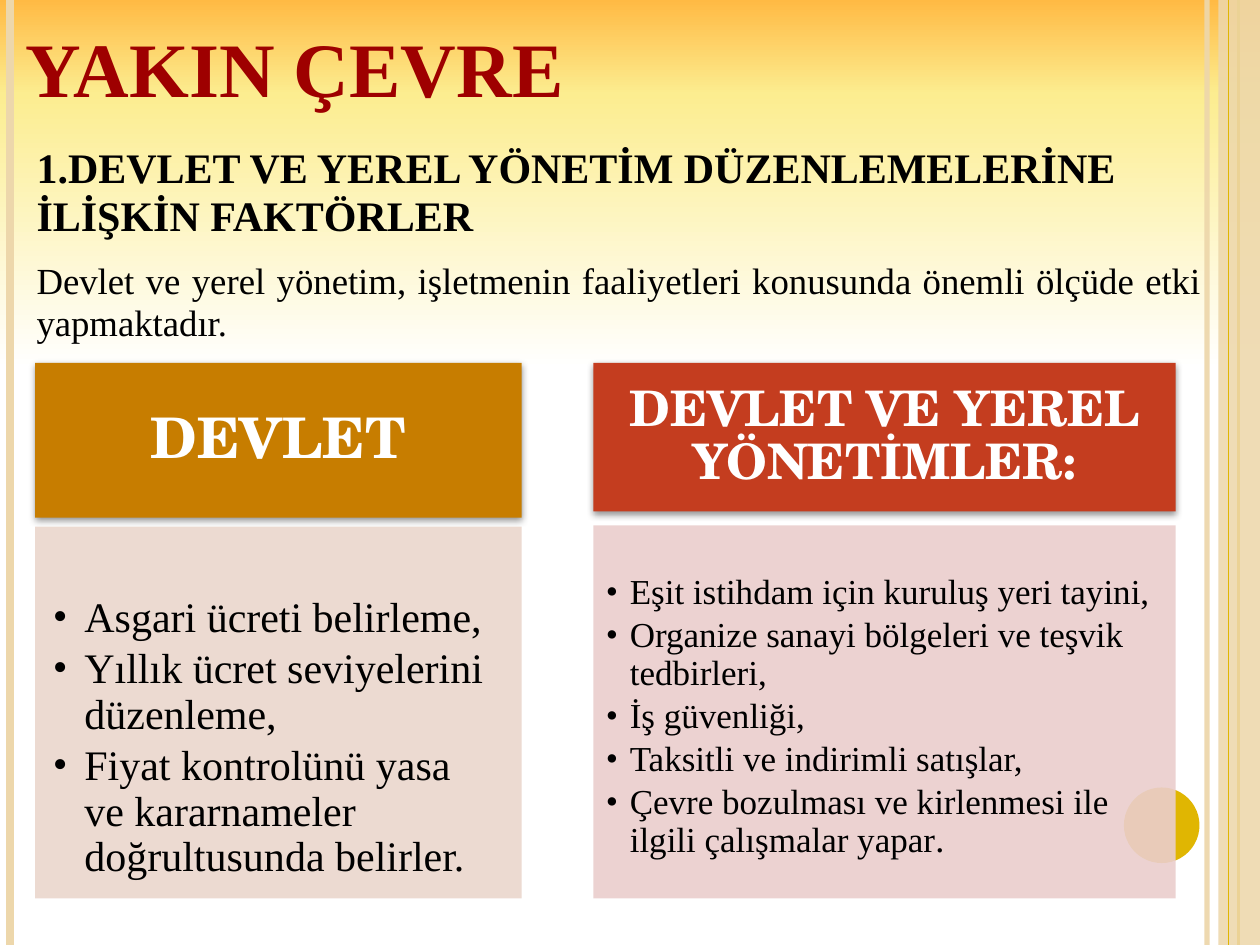
from copy import deepcopy
from dataclasses import dataclass

from lxml import etree
from pptx import Presentation
from pptx.dml import color
from pptx.enum import shapes, text
from pptx.oxml import ns
from pptx.util import Inches, Pt


@dataclass(frozen=True)
class Theme:
    serif: str = "Times New Roman"
    display: str = "TeX Gyre Schola"
    title: str = "9E0000"
    ink: str = "000000"
    white: str = "FFFFFF"
    sand: str = "EDD7AB"
    gold: str = "E0B602"
    background: tuple = ((0, "FFBA44"), (10, "FCED90"), (39, "FFFFFF"))
    title_size: float = 44
    heading_size: float = 24
    body_size: float = 21


@dataclass(frozen=True)
class Box:
    left: float
    top: float
    width: float
    height: float

    def emu(self) -> tuple:
        return tuple(Inches(v) for v in (self.left, self.top, self.width, self.height))


@dataclass(frozen=True)
class Rule:
    x: float
    color: str
    weight: float
    opacity: int = 100


@dataclass(frozen=True)
class Card:
    header: Box
    header_fill: str
    title: str
    title_size: float
    header_insets: tuple
    panel: Box
    panel_fill: str
    items: tuple
    item_size: float
    item_insets: tuple
    indent: float
    end_mark: str = ""


THEME = Theme()
RULES = (
    Rule(9.58, THEME.sand, 3, 93),
    Rule(0.08, THEME.sand, 4.5),
    Rule(9.83, THEME.gold, 1.5),
)
INNER_RULE = Rule(9.75, THEME.gold, 0.75)
CARDS = (
    Card(
        Box(0.28, 2.88, 3.86, 1.23), "C77D00", "DEVLET", 32, (0.25, 0.14, 0.25, 0.14),
        Box(0.28, 4.18, 3.86, 2.95), "EBD7CC",
        (
            "Asgari ücreti belirleme,",
            "Yıllık ücret seviyelerini düzenleme,",
            "Fiyat kontrolünü yasa ve kararnameler doğrultusunda belirler.",
        ),
        24, (0.14, 0.55, 0.19, 0.21), 0.25,
    ),
    Card(
        Box(4.71, 2.88, 4.62, 1.18), "C43D1F", "DEVLET VE YEREL YÖNETİMLER:", 28,
        (0.22, 0.12, 0.22, 0.12),
        Box(4.71, 4.17, 4.62, 2.96), "EACECD",
        (
            "Eşit istihdam için kuruluş yeri tayini,",
            "Organize sanayi bölgeleri ve teşvik tedbirleri,",
            "İş güvenliği,",
            "Taksitli ve indirimli satışlar,",
            "Çevre bozulması ve kirlenmesi ile ilgili çalışmalar yapar",
        ),
        20, (0.1, 0.39, 0.13, 0.15), 0.19, ".",
    ),
)


def add_xml(parent, tag: str, **attributes):
    return etree.SubElement(parent, ns.qn(tag), {k: str(v) for k, v in attributes.items()})


def set_fill(fill, rgb: str, opacity: int = 100) -> None:
    fill.solid()
    fill.fore_color.rgb = color.RGBColor.from_string(rgb)
    if opacity < 100:
        add_xml(fill._xPr.find(".//" + ns.qn("a:srgbClr")), "a:alpha", val=opacity * 1000)


def add_shape(slide, kind, box: Box, rgb: str, opacity: int = 100):
    shape = slide.shapes.add_shape(kind, *box.emu())
    shape.shadow.inherit = False
    set_fill(shape.fill, rgb, opacity)
    shape.line.fill.background()
    return shape


def add_rule(slide, rule: Rule) -> None:
    x = Inches(rule.x)
    line = slide.shapes.add_connector(shapes.MSO_CONNECTOR.STRAIGHT, x, 0, x, Inches(7.5))
    set_fill(line.line.fill, rule.color, rule.opacity)
    line.line.width = Pt(rule.weight)
    add_xml(line._element.spPr, "a:effectLst")


def add_shadow(shape) -> None:
    effects = shape._element.spPr.find(ns.qn("a:effectLst"))
    shadow = add_xml(effects, "a:outerShdw", blurRad=Pt(4), dist=Pt(1.6), dir=5400000,
                     algn="ctr", rotWithShape=0)
    black = add_xml(shadow, "a:srgbClr", val=THEME.ink)
    add_xml(black, "a:alpha", val=42000)


def prepare_frame(shape, insets=(0, 0, 0, 0), anchor=text.MSO_ANCHOR.TOP):
    frame = shape.text_frame
    frame.word_wrap = True
    frame.auto_size = text.MSO_AUTO_SIZE.NONE
    frame.vertical_anchor = anchor
    frame.margin_left, frame.margin_top, frame.margin_right, frame.margin_bottom = map(Inches, insets)
    return frame


def write(frame, content: str, *, size: float, rgb: str = THEME.ink, font: str = THEME.serif,
          bold: bool = False, align=text.PP_ALIGN.LEFT, spacing: float = 0.95, before: float = 0,
          after: float = 0, margin: float = 0, bullet: bool = False, end_mark: str = "") -> None:
    paragraph = frame.paragraphs[-1]
    if paragraph.runs:
        paragraph = frame.add_paragraph()
    paragraph.alignment = align
    paragraph.line_spacing = spacing
    paragraph.space_before, paragraph.space_after = Pt(before), Pt(after)
    properties = paragraph._p.get_or_add_pPr()
    properties.set("marL", str(Inches(margin)))
    properties.set("indent", str(-Inches(margin) if bullet else 0))
    if bullet:
        add_xml(properties, "a:buFont", typeface=THEME.serif)
        add_xml(properties, "a:buChar", char="•")
    else:
        add_xml(properties, "a:buNone")
    for words, face in ((content, font), (end_mark, THEME.display)):
        if words:
            run = paragraph.add_run()
            run.text = words
            run.font.name, run.font.size, run.font.bold = face, Pt(size), bold
            run.font.color.rgb = color.RGBColor.from_string(rgb)


def paint_background(slide) -> None:
    fill = slide.background.fill
    fill.gradient()
    fill.gradient_angle = 270
    stops = fill._fill._gradFill.find(ns.qn("a:gsLst"))
    for stop in list(stops):
        stops.remove(stop)
    for position, rgb in THEME.background:
        add_xml(add_xml(stops, "a:gs", pos=position * 1000), "a:srgbClr", val=rgb)


def add_card(slide, card: Card) -> None:
    rectangle = shapes.MSO_SHAPE.RECTANGLE
    header = add_shape(slide, rectangle, card.header, card.header_fill)
    add_shadow(header)
    write(prepare_frame(header, card.header_insets, text.MSO_ANCHOR.MIDDLE), card.title,
          size=card.title_size, rgb=THEME.white, font=THEME.display, bold=True,
          align=text.PP_ALIGN.CENTER, spacing=0.9)
    panel = add_shape(slide, rectangle, card.panel, card.panel_fill, 90)
    frame = prepare_frame(panel, card.item_insets)
    for item in card.items:
        write(frame, item, size=card.item_size, spacing=0.9, after=card.item_size * 0.15,
              margin=card.indent, bullet=True,
              end_mark=card.end_mark if item == card.items[-1] else "")


def place(shape, box: Box) -> None:
    shape.left, shape.top, shape.width, shape.height = box.emu()


def main() -> None:
    presentation = Presentation()
    presentation.slide_width, presentation.slide_height = Inches(10), Inches(7.5)
    slide = presentation.slides.add_slide(presentation.slide_layouts[1])
    paint_background(slide)
    for rule in RULES:
        add_rule(slide, rule)
    add_shape(slide, shapes.MSO_SHAPE.RECTANGLE, Box(9.67, 0, 0.33, 7.5), THEME.sand, 87)
    add_rule(slide, INNER_RULE)
    add_shape(slide, shapes.MSO_SHAPE.OVAL, Box(8.92, 6.25, 0.6, 0.6), THEME.gold)

    title, body = slide.shapes.title, slide.placeholders[1]
    place(title, Box(0.2, 0.28, 9.35, 0.63))
    write(prepare_frame(title, anchor=text.MSO_ANCHOR.BOTTOM), "YAKIN ÇEVRE",
          size=THEME.title_size, rgb=THEME.title, bold=True)
    place(body, Box(-0.04, 1.15, 9.58, 1.89))
    frame = prepare_frame(body)
    write(frame, "1.DEVLET VE YEREL YÖNETİM DÜZENLEMELERİNE İLİŞKİN FAKTÖRLER",
          size=THEME.heading_size, bold=True, margin=0.33)
    write(frame, "Devlet ve yerel yönetim, işletmenin faaliyetleri konusunda önemli ölçüde etki yapmaktadır.",
          size=THEME.body_size, align=text.PP_ALIGN.JUSTIFY, before=11.4, margin=0.33)
    for card in CARDS:
        add_card(slide, card)
    presentation.save("out.pptx")


if __name__ == "__main__":
    main()
